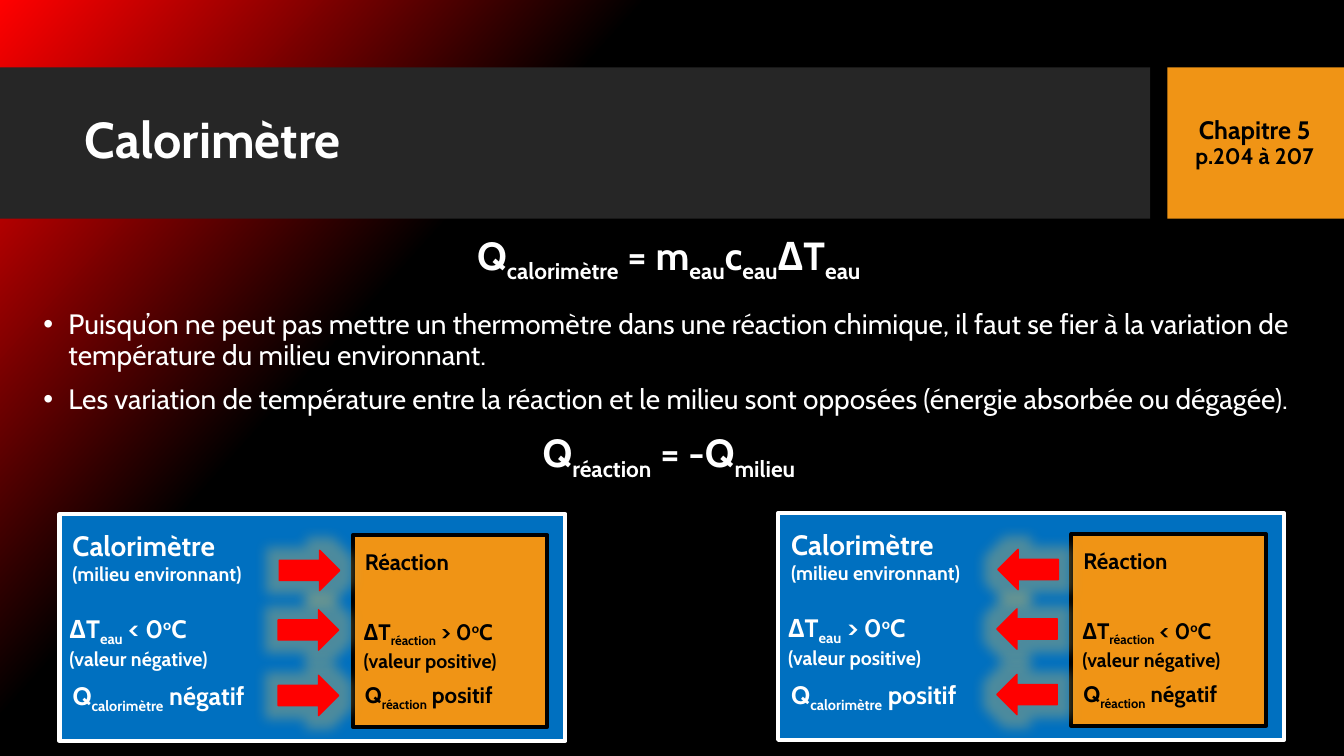
from lxml import etree
from pptx import Presentation
from pptx.dml.color import RGBColor
from pptx.enum.shapes import MSO_SHAPE
from pptx.enum.text import MSO_ANCHOR, MSO_AUTO_SIZE, PP_ALIGN
from pptx.oxml.ns import qn
from pptx.util import Pt

RECTANGLE, ARROW = MSO_SHAPE.RECTANGLE, MSO_SHAPE.RIGHT_ARROW
TOP, MIDDLE = MSO_ANCHOR.TOP, MSO_ANCHOR.MIDDLE
LEFT, CENTER = PP_ALIGN.LEFT, PP_ALIGN.CENTER
NO_AUTOFIT = MSO_AUTO_SIZE.NONE
TITLE_ONLY = 5

FONT = "Cabin"
BLACK = RGBColor(0x00, 0x00, 0x00)
WHITE = RGBColor(0xFF, 0xFF, 0xFF)
RED = RGBColor(0xFF, 0x00, 0x00)
CHARCOAL = RGBColor(0x26, 0x26, 0x26)
ORANGE = RGBColor(0xF0, 0x94, 0x15)
BLUE = RGBColor(0x00, 0x70, 0xC0)
GLOW = RGBColor(0xC1, 0xB5, 0x6B)

SUB, SUPER = -25, 30
DEGREES = [("o", SUPER), "C"]


def add_spans(para, spans, size, color, bold=True):
    """Add runs; a span is a string or a (string, baseline percent) pair."""
    for item in spans:
        words, baseline = (item, 0) if isinstance(item, str) else item
        span = para.add_run()
        span.text = words
        span.font.name = FONT
        span.font.size = Pt(size)
        span.font.bold = bold
        span.font.color.rgb = color
        if baseline:
            span._r.get_or_add_rPr().set("baseline", str(baseline * 1000))


def add_bullet(para):
    """Give a paragraph a hanging round bullet in the colour of its text."""
    properties = para._p.get_or_add_pPr()
    properties.set("marL", str(Pt(18)))
    properties.set("indent", str(-Pt(18)))
    etree.SubElement(properties, qn("a:buFont")).set("typeface", "Arial")
    etree.SubElement(properties, qn("a:buChar")).set("char", "•")


def add_text(page, place, lines, color, anchor=TOP, align=LEFT, spacing=1.0):
    """Add a text box whose lines are (spans, size) pairs."""
    box = page.shapes.add_textbox(*map(Pt, place))
    frame = box.text_frame
    frame.word_wrap = True
    frame.vertical_anchor = anchor
    for index, (spans, size) in enumerate(lines):
        para = frame.add_paragraph() if index else frame.paragraphs[0]
        para.alignment = align
        para.line_spacing = spacing
        add_spans(para, spans, size, color)


def add_block(page, kind, place, fill, line=None, width=0):
    """Add a filled preset shape, with an outline when a line colour is given."""
    block = page.shapes.add_shape(kind, *map(Pt, place))
    block.shadow.inherit = False
    block.fill.solid()
    block.fill.fore_color.rgb = fill
    if line is None:
        block.line.fill.background()
    else:
        block.line.color.rgb = line
        block.line.width = Pt(width)
    return block


def add_heat_arrow(page, left, top, rotation):
    """Add a red arrow with a soft translucent glow."""
    arrow = add_block(page, ARROW, (left, top, 43.2, 28.8), RED, RED, 1)
    arrow.rotation = rotation
    effects = arrow._element.spPr.find(qn("a:effectLst"))
    glow = etree.SubElement(effects, qn("a:glow"), rad=str(Pt(18)))
    tint = etree.SubElement(glow, qn("a:srgbClr"), val=str(GLOW))
    etree.SubElement(tint, qn("a:alpha"), val="40000")


def paint_background(page):
    """Fill the page with a red corner that fades to black."""
    fill = page.background.fill
    fill.gradient()
    fill.gradient_angle = 360 - 42
    for stop, position, color in zip(fill.gradient_stops, (0, 0.32), (RED, BLACK)):
        stop.position = position
        stop.color.rgb = color


def add_header(page):
    """Add the title band and the chapter reference."""
    add_block(page, RECTANGLE, (0, 48.2, 821.6, 108), CHARCOAL)
    add_block(page, RECTANGLE, (833.8, 48.2, 126.2, 108), ORANGE)
    title = page.shapes.title
    page.shapes._spTree.append(title._element)
    title.left, title.top, title.width, title.height = map(Pt, (53.3, 59, 756.7, 85))
    frame = title.text_frame
    frame.auto_size = NO_AUTOFIT
    frame.vertical_anchor = MIDDLE
    para = frame.paragraphs[0]
    para.alignment = LEFT
    para.line_spacing = 0.9
    add_spans(para, ["Calorimètre"], 36, WHITE)
    add_text(page, (832.3, 48.2, 127.7, 108.7),
             [(["Chapitre 5"], 18), (["p.204 à 207"], 16)],
             BLACK, MIDDLE, CENTER, 0.9)


def add_explanation(page, bullets, formula):
    """Add the bulleted explanation that ends in a centred formula."""
    box = page.shapes.add_textbox(*map(Pt, (23.8, 207.4, 907.9, 148.3)))
    frame = box.text_frame
    frame.word_wrap = True
    frame.vertical_anchor = MIDDLE
    for index, sentence in enumerate(bullets):
        para = frame.add_paragraph() if index else frame.paragraphs[0]
        para.line_spacing = 0.9
        para.space_before = Pt(10 if index else 0)
        add_bullet(para)
        add_spans(para, [sentence], 20, WHITE, False)
    para = frame.add_paragraph()
    para.alignment = CENTER
    para.line_spacing = 0.9
    para.space_before = Pt(10)
    add_spans(para, formula, 28, WHITE)


def add_calorimeter(page, left, top, rotation, water, reaction):
    """Draw a calorimeter; water and reaction are (comparison, sign) pairs."""
    add_block(page, RECTANGLE, (left, top, 361.4, 162), BLUE, WHITE, 3)
    add_block(page, RECTANGLE, (left + 209.5, top + 15.1, 139, 136.8), ORANGE, BLACK, 3)
    for shift, drop in ((157, 25.9), (156.2, 68.4), (156.2, 115.2)):
        add_heat_arrow(page, left + shift, top + drop, rotation)

    (water_compare, water_sign), (reaction_compare, reaction_sign) = water, reaction
    labels = [
        (2.2, 6.5, 180, 48.2, WHITE,
         [(["Calorimètre"], 20), (["(milieu environnant)"], 14)]),
        (0, 67, 186.5, 46, WHITE,
         [(["ΔT", ("eau", SUB), f" {water_compare} 0", *DEGREES], 18),
          ([f"(valeur {water_sign}ve)"], 14)]),
        (2.2, 115.2, 186.5, 28.8, WHITE,
         [(["Q", ("calorimètre", SUB), f" {water_sign}f"], 18)]),
        (211, 20.9, 139, 26.6, BLACK, [(["Réaction"], 16)]),
        (210.2, 70.6, 139, 44, BLACK,
         [(["ΔT", ("réaction", SUB), f" {reaction_compare} 0", *DEGREES], 16),
          ([f"(valeur {reaction_sign}ve)"], 14)]),
        (211, 115.9, 139, 26.6, BLACK,
         [(["Q", ("réaction", SUB), f" {reaction_sign}f"], 16)]),
    ]
    for shift, drop, width, height, color, lines in labels:
        add_text(page, (left + shift, top + drop, width, height), lines, color)


def main():
    """Build the calorimeter slide and save it."""
    deck = Presentation()
    deck.slide_width, deck.slide_height = Pt(960), Pt(540)
    page = deck.slides.add_slide(deck.slide_layouts[TITLE_ONLY])
    paint_background(page)
    add_header(page)
    water_heat = ["Q", ("calorimètre", SUB), " = m", ("eau", SUB),
                  "c", ("eau", SUB), "ΔT", ("eau", SUB)]
    add_text(page, (23.8, 157, 907.9, 54), [(water_heat, 28)], WHITE, MIDDLE, CENTER)
    add_explanation(
        page,
        ["Puisqu’on ne peut pas mettre un thermomètre dans une réaction chimique, "
         "il faut se fier à la variation de température du milieu environnant.",
         "Les variation de température entre la réaction et le milieu sont opposées "
         "(énergie absorbée ou dégagée)."],
        ["Q", ("réaction", SUB), " = -Q", ("milieu", SUB)])
    falling, rising = ("<", "négati"), (">", "positi")
    add_calorimeter(page, 42.5, 367.2, 0, falling, rising)
    add_calorimeter(page, 555.8, 366.5, 180, rising, falling)
    deck.save("out.pptx")


if __name__ == "__main__":
    main()
